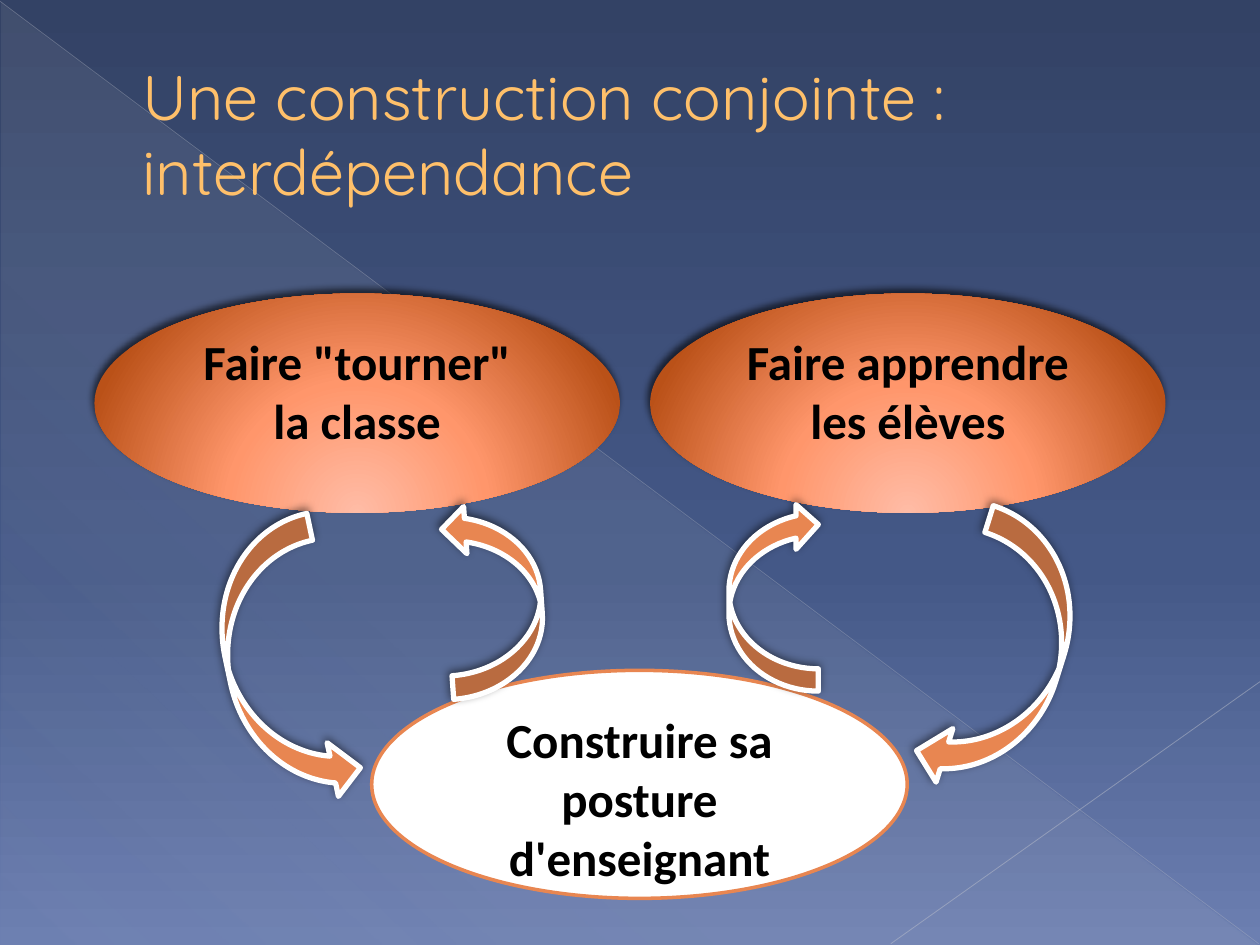
"""Build the slide on the interdependence of teaching tasks."""
from lxml import etree
from pptx import Presentation
from pptx.dml.color import RGBColor
from pptx.enum.shapes import MSO_CONNECTOR, MSO_SHAPE
from pptx.enum.text import MSO_ANCHOR, PP_ALIGN
from pptx.oxml import parse_xml
from pptx.oxml.ns import nsdecls
from pptx.util import Inches, Pt

OVAL, TRIANGLE = MSO_SHAPE.OVAL, MSO_SHAPE.RIGHT_TRIANGLE
DOWN, UP, RIGHT = (MSO_SHAPE.CURVED_DOWN_ARROW, MSO_SHAPE.CURVED_UP_ARROW,
                   MSO_SHAPE.CURVED_RIGHT_ARROW)
STRAIGHT = MSO_CONNECTOR.STRAIGHT
LEFT, CENTER = PP_ALIGN.LEFT, PP_ALIGN.CENTER
TOP, MIDDLE = MSO_ANCHOR.TOP, MSO_ANCHOR.MIDDLE

THEME = {
    "accent": "E88651",
    "white": "FFFFFF",
    "title": {"name": "Quicksand", "size": Pt(36), "bold": False, "color": "FFC06A"},
    "label": {"name": "Calibri", "size": Pt(28), "bold": True, "color": "000000"},
    "sky": [(0, "334265", 100), (60, "445887", 100), (100, "6C7FB1", 100)],
    "veil": [(0, "D4D4D6", 10), (70, "D4D4D6", 8), (100, "D4D4D6", 1)],
    "glow": [(0, "FFBCA6", 100), (46, "FF966B", 100), (100, "BA5118", 100)],
    "oval_shadow": (60, 4, 3),
    "arrow_shadow": (50, 5, 2),
}
GLOW_CENTRE = ('<a:path path="circle"><a:fillToRect l="50000" t="155000" '
               'r="50000" b="-55000"/></a:path>')

TITLE = "Une construction conjointe : interdépendance"
TASKS = [("Faire \"tourner\" la classe", (0.75, 2.33, 4.17, 1.74)),
         ("Faire apprendre les élèves", (5.16, 2.33, 4.09, 1.74))]
POSTURE = ("Construire sa posture d'enseignant", (2.95, 5.32, 4.25, 1.81))
ARROWS = [(DOWN, (6.84, 4.78, 2.26, 0.89), 107.4),
          (DOWN, (5.39, 4.38, 1.5, 0.71), 270),
          (RIGHT, (1.81, 4.14, 0.87, 2.28), 348.1),
          (UP, (3.15, 4.38, 1.54, 0.75), 265.9)]
RAYS = [((0, 0.01, 9.99, 7.49), "B9BDC8", 0.39, 35),
        ((10, 5.41, 7.07, 7.49), "C1C4CE", 0.47, 45)]


def rgb(value):
    return RGBColor.from_string(value)


def inches(values):
    return [Inches(value) for value in values]


def linear(angle):
    return f'<a:lin ang="{angle * 60000}" scaled="0"/>'


def set_gradient(fill, parent, stops, direction):
    fill.background()
    marks = "".join(
        f'<a:gs pos="{place * 1000}"><a:srgbClr val="{color}">'
        f'<a:alpha val="{alpha * 1000}"/></a:srgbClr></a:gs>'
        for place, color, alpha in stops)
    gradient = parse_xml(f'<a:gradFill {nsdecls("a")} rotWithShape="1">'
                         f'<a:gsLst>{marks}</a:gsLst>{direction}</a:gradFill>')
    blank = parent.find("{*}noFill")
    parent.replace(blank, gradient)


def set_shadow(shape, alpha, blur, distance):
    shape.shadow.inherit = False
    effects = shape.element.spPr.find("{*}effectLst")
    effects.append(parse_xml(
        f'<a:outerShdw {nsdecls("a")} blurRad="{Pt(blur)}" dist="{Pt(distance)}" '
        f'dir="{245 * 60000}" algn="tl" rotWithShape="0"><a:srgbClr val="000000">'
        f'<a:alpha val="{alpha * 1000}"/></a:srgbClr></a:outerShdw>'))


def add_plain(shapes, kind, box):
    shape = shapes.add_shape(kind, *inches(box))
    shape.shadow.inherit = False
    shape.line.fill.background()
    return shape


def set_outline(shape, fill, line, width):
    shape.fill.solid()
    shape.fill.fore_color.rgb = rgb(fill)
    shape.line.color.rgb = rgb(line)
    shape.line.width = Pt(width)


def write(shape, text, style, align, anchor):
    frame = shape.text_frame
    frame.word_wrap = True
    frame.vertical_anchor = anchor
    paragraph = frame.paragraphs[0]
    paragraph.alignment = align
    run = paragraph.add_run()
    run.text = text
    for key in ("name", "size", "bold"):
        setattr(run.font, key, style[key])
    run.font.color.rgb = rgb(style["color"])
    return paragraph


def add_backdrop(slide):
    background = slide.background.fill
    background.background()
    holder = slide.element.cSld.find("{*}bg/{*}bgPr")
    set_gradient(background, holder, THEME["sky"], linear(90))
    veil = add_plain(slide.shapes, TRIANGLE, (0.01, 0.02, 9.98, 7.48))
    set_gradient(veil.fill, veil.element.spPr, THEME["veil"], linear(133))
    for ends, color, width, alpha in RAYS:
        ray = slide.shapes.add_connector(STRAIGHT, *inches(ends))
        ray.line.color.rgb = rgb(color)
        ray.line.width = Pt(width)
        properties = ray.element.spPr
        tint = properties.find(".//{*}srgbClr")
        tint.append(parse_xml(f'<a:alpha {nsdecls("a")} val="{alpha * 1000}"/>'))
        etree.SubElement(properties, tint.tag.replace("srgbClr", "effectLst"))


def add_title(slide):
    title = slide.shapes.title
    title.left, title.top, title.width, title.height = inches((0.5, 0.29, 9, 1.53))
    paragraph = write(title, TITLE, THEME["title"], LEFT, MIDDLE)
    margins = paragraph._p.get_or_add_pPr()
    margins.set("marL", str(Inches(0.53)))
    margins.set("indent", "0")
    slide.shapes.element.append(title.element)


def add_diagram(shapes):
    for text, box in TASKS:
        task = add_plain(shapes, OVAL, box)
        set_gradient(task.fill, task.element.spPr, THEME["glow"], GLOW_CENTRE)
        set_shadow(task, *THEME["oval_shadow"])
        write(task, text, THEME["label"], CENTER, TOP)
    text, box = POSTURE
    posture = add_plain(shapes, OVAL, box)
    set_outline(posture, THEME["white"], THEME["accent"], 2)
    write(posture, text, THEME["label"], CENTER, TOP)
    for kind, box, angle in ARROWS:
        arrow = add_plain(shapes, kind, box)
        arrow.rotation = angle
        set_outline(arrow, THEME["accent"], THEME["white"], 3)
        set_shadow(arrow, *THEME["arrow_shadow"])


deck = Presentation()
deck.slide_width, deck.slide_height = inches((10, 7.5))
page = deck.slides.add_slide(deck.slide_layouts[5])
add_backdrop(page)
add_title(page)
add_diagram(page.shapes)
deck.save("out.pptx")
